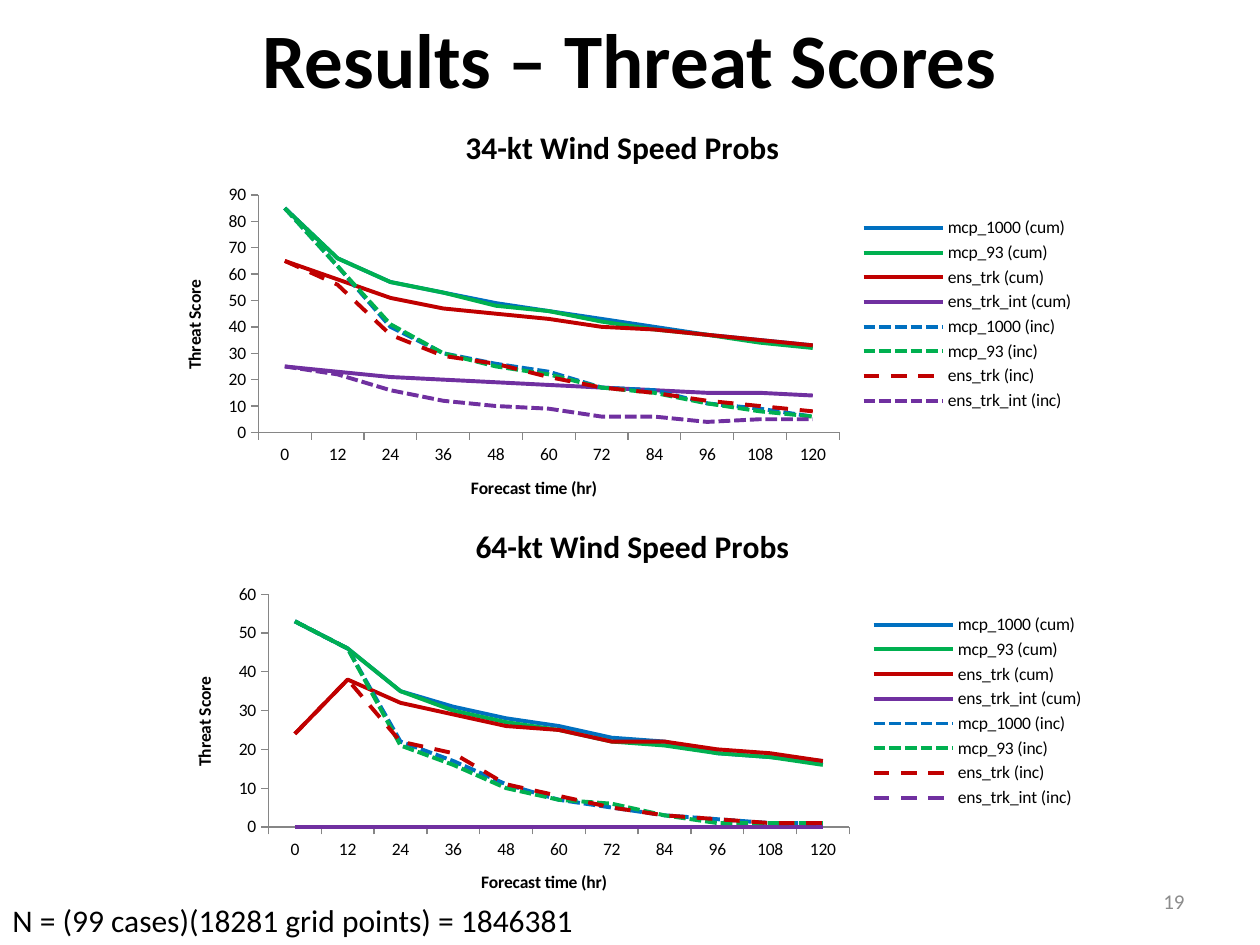
from pptx import Presentation
from pptx.chart.data import CategoryChartData
from pptx.dml.color import RGBColor
from pptx.enum.chart import XL_CHART_TYPE, XL_LEGEND_POSITION, XL_MARKER_STYLE, XL_TICK_MARK
from pptx.enum.dml import MSO_LINE
from pptx.enum.text import MSO_ANCHOR, PP_ALIGN
from pptx.util import Inches, Pt

LINE_CHART = XL_CHART_TYPE.LINE
LEGEND_RIGHT = XL_LEGEND_POSITION.RIGHT
NO_MARKER = XL_MARKER_STYLE.NONE
TICK_OUTSIDE = XL_TICK_MARK.OUTSIDE
SOLID, SHORT_DASH, DASH = MSO_LINE.SOLID, MSO_LINE.SQUARE_DOT, MSO_LINE.DASH
MIDDLE, CENTER, RIGHT = MSO_ANCHOR.MIDDLE, PP_ALIGN.CENTER, PP_ALIGN.RIGHT

FONT = "Calibri"
COLORS = {
    "text": "000000", "number": "8C8C8C", "axis": "868686",
    "mcp_1000": "0070C0", "mcp_93": "00B050",
    "ens_trk": "C00000", "ens_trk_int": "7030A0",
}
MODELS = ["mcp_1000", "mcp_93", "ens_trk", "ens_trk_int"]
FORECAST_HOURS = [str(hour) for hour in range(0, 121, 12)]

# Each panel: title, left, top, height, axis top, axis step, scores and dashes
PANELS = [
    ("34-kt Wind Speed Probs", 1.25, 0.83, 3.33, 90, 10, {
        "cum": [
            [85, 66, 57, 53, 49, 46, 43, 40, 37, 35, 33],
            [85, 66, 57, 53, 48, 46, 42, 39, 37, 34, 32],
            [65, 58, 51, 47, 45, 43, 40, 39, 37, 35, 33],
            [25, 23, 21, 20, 19, 18, 17, 16, 15, 15, 14],
        ],
        "inc": [
            [85, 63, 40, 30, 26, 23, 17, 16, 11, 9, 6],
            [85, 63, 41, 30, 25, 22, 17, 15, 11, 8, 6],
            [65, 56, 37, 29, 26, 21, 17, 15, 12, 10, 8],
            [25, 22, 16, 12, 10, 9, 6, 6, 4, 5, 5],
        ],
    }, [SHORT_DASH, SHORT_DASH, DASH, SHORT_DASH]),
    ("64-kt Wind Speed Probs", 1.33, 4, 3.29, 60, 10, {
        "cum": [
            [53, 46, 35, 31, 28, 26, 23, 22, 19, 18, 17],
            [53, 46, 35, 30, 27, 25, 22, 21, 19, 18, 16],
            [24, 38, 32, 29, 26, 25, 22, 22, 20, 19, 17],
            [0] * 11,
        ],
        "inc": [
            [53, 46, 22, 17, 11, 7, 5, 3, 2, 1, 1],
            [53, 46, 21, 16, 10, 7, 6, 3, 1, 1, 1],
            [24, 38, 22, 19, 11, 8, 5, 3, 2, 1, 1],
            [0] * 11,
        ],
    }, [SHORT_DASH, SHORT_DASH, DASH, DASH]),
]


def style_font(font, size, color="text", bold=False):
    font.name = FONT
    font.size = Pt(size)
    font.bold = bold
    font.color.rgb = RGBColor.from_string(COLORS[color])


def set_text(frame, text, size, color="text", bold=False):
    frame.text = text
    style_font(frame.paragraphs[0].runs[0].font, size, color, bold)


prs = Presentation()
prs.slide_width, prs.slide_height = Inches(10), Inches(7.5)
slide = prs.slides.add_slide(prs.slide_layouts[5])

# Title
title = slide.shapes.title
title.left, title.top = Inches(0.5), Inches(0)
title.width, title.height = Inches(9), Inches(0.92)
set_text(title.text_frame, "Results – Threat Scores", 44, bold=True)
title.text_frame.vertical_anchor = MIDDLE
title.text_frame.paragraphs[0].alignment = CENTER

# Slide number
number = slide.shapes.add_textbox(Inches(7.17), Inches(6.95), Inches(2.33), Inches(0.4)).text_frame
number.word_wrap = True
number.vertical_anchor = MIDDLE
set_text(number, "19", 12, "number")
number.paragraphs[0].alignment = RIGHT

# Sample size
sample = slide.shapes.add_textbox(Inches(0), Inches(7.1), Inches(4.71), Inches(0.4)).text_frame
sample.word_wrap = False
set_text(sample, "N = (99 cases)(18281 grid points) = 1846381", 18)

# Threat score charts
for heading, left, top, height, axis_top, axis_step, scores, dashes in PANELS:
    data = CategoryChartData(number_format="0")
    data.categories = FORECAST_HOURS
    line_styles = []
    for kind, model_dashes in (("cum", [SOLID] * 4), ("inc", dashes)):
        for model, values, dash in zip(MODELS, scores[kind], model_dashes):
            data.add_series(f"{model} ({kind})", values)
            line_styles.append((COLORS[model], dash))

    chart = slide.shapes.add_chart(
        LINE_CHART, Inches(left), Inches(top), Inches(7.38), Inches(height), data).chart
    style_font(chart.font, 10)
    chart.has_title = True
    set_text(chart.chart_title.text_frame, heading, 18, bold=True)
    chart.chart_title.include_in_layout = False
    chart.has_legend = True
    chart.legend.position = LEGEND_RIGHT
    chart.legend.include_in_layout = False

    # Axes
    for axis, label in ((chart.category_axis, "Forecast time (hr)"),
                        (chart.value_axis, "Threat Score")):
        axis.has_major_gridlines = False
        axis.major_tick_mark = TICK_OUTSIDE
        axis.format.line.color.rgb = RGBColor.from_string(COLORS["axis"])
        set_text(axis.axis_title.text_frame, label, 10, bold=True)
    chart.value_axis.minimum_scale = 0
    chart.value_axis.maximum_scale = axis_top
    chart.value_axis.major_unit = axis_step

    # Model lines: solid for cumulative, dashed for incremental
    chart.plots[0].vary_by_categories = False
    for series, (color, dash) in zip(chart.plots[0].series, line_styles):
        series.smooth = False
        series.marker.style = NO_MARKER
        series.format.line.width = Pt(2.25)
        series.format.line.color.rgb = RGBColor.from_string(color)
        series.format.line.dash_style = dash

prs.save("out.pptx")
